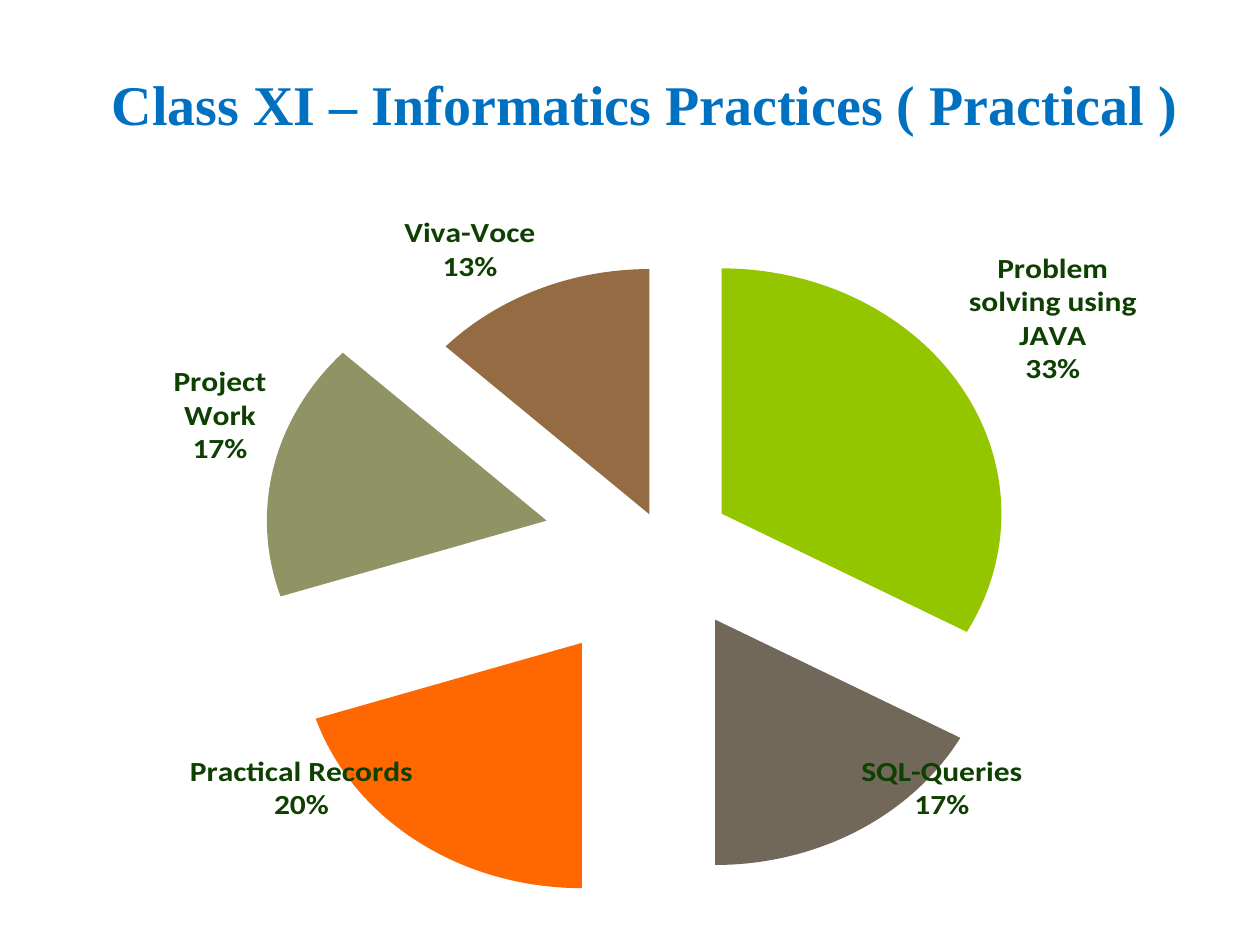
from dataclasses import dataclass

from lxml.etree import SubElement
from pptx import Presentation
from pptx.chart.data import CategoryChartData
from pptx.dml.color import RGBColor
from pptx.enum.chart import XL_CHART_TYPE, XL_LABEL_POSITION
from pptx.enum.text import MSO_AUTO_SIZE, PP_ALIGN
from pptx.oxml.ns import qn
from pptx.util import Inches, Pt


@dataclass(frozen=True)
class Theme:
    title_font: str = "Times New Roman"
    title_size: int = 32
    title_color: str = "0070C0"
    chart_font: str = "Calibri"
    chart_size: int = 10
    label_size: int = 18
    label_color: str = "0E4002"


THEME = Theme()

# Category, share, slice colour, explosion in percent of the radius
SLICES = [
    ("Problem solving using JAVA", 33, "94C600", 24),
    ("SQL-Queries", 17, "71685A", 36),
    ("Practical Records", 20, "FF6700", 50),
    ("Project Work", 17, "909465", 43),
    ("Viva-Voce", 13, "956B43", 13),
]
PLOT = {"x": 0.06, "y": 0.2, "w": 0.94, "h": 0.75}


def set_plot_area(chart, plot):
    """Fix the inner plot area, in fractions of the chart."""
    area = chart.plots[0]._element.getparent()
    layout = area.find(qn("c:layout"))
    if layout is None:
        layout = SubElement(area, qn("c:layout"))
        area.insert(0, layout)
    manual = SubElement(layout, qn("c:manualLayout"))
    settings = {"layoutTarget": "inner", "xMode": "edge", "yMode": "edge", **plot}
    for name, value in settings.items():
        SubElement(manual, qn(f"c:{name}")).set("val", str(value))


def add_pie(slide, left, top, width, height):
    data = CategoryChartData()
    data.categories = [name for name, *_ in SLICES]
    data.add_series("Series 1", [share for _, share, *_ in SLICES])
    chart = slide.shapes.add_chart(
        XL_CHART_TYPE.PIE, left, top, width, height, data).chart
    chart.has_title = False
    chart.has_legend = False
    chart.font.name = THEME.chart_font
    chart.font.size = Pt(THEME.chart_size)
    set_plot_area(chart, PLOT)

    # Slices
    plot = chart.plots[0]
    plot.vary_by_categories = True
    for i, (_, _, color, explosion) in enumerate(SLICES):
        point = plot.series[0].points[i]
        point.format.fill.solid()
        point.format.fill.fore_color.rgb = RGBColor.from_string(color)
        point.format.line.fill.background()
        dpt = point.format._element if hasattr(point.format, "_element") else None
        if dpt is None:
            dpt = plot.series[0]._element.findall(qn("c:dPt"))[i]
        exploded = SubElement(dpt, qn("c:explosion"))
        exploded.set("val", str(explosion))
        dpt.find(qn("c:spPr")).addprevious(exploded)

    # Labels
    plot.has_data_labels = True
    labels = plot.data_labels
    labels.show_category_name = True
    labels.show_percentage = True
    labels.show_value = False
    labels.position = XL_LABEL_POSITION.OUTSIDE_END
    labels.font.name = THEME.chart_font
    labels.font.size = Pt(THEME.label_size)
    labels.font.bold = True
    labels.font.color.rgb = RGBColor.from_string(THEME.label_color)


def add_title(slide, left, top, width, height):
    tf = slide.shapes.add_textbox(left, top, width, height).text_frame
    tf.word_wrap = False
    tf.auto_size = MSO_AUTO_SIZE.SHAPE_TO_FIT_TEXT
    p = tf.paragraphs[0]
    p.text = "Class XI – Informatics Practices ( Practical )"
    p.alignment = PP_ALIGN.CENTER
    p.font.name = THEME.title_font
    p.font.size = Pt(THEME.title_size)
    p.font.bold = True
    p.font.color.rgb = RGBColor.from_string(THEME.title_color)


def main():
    prs = Presentation()
    prs.slide_width, prs.slide_height = Inches(10), Inches(7.5)
    slide = prs.slides.add_slide(prs.slide_layouts[6])
    add_pie(slide, Inches(0.5), Inches(1.33), Inches(9), Inches(5.92))
    add_title(slide, Inches(0.75), Inches(0.5), Inches(8.74), Inches(0.64))
    prs.save("out.pptx")


if __name__ == "__main__":
    main()
